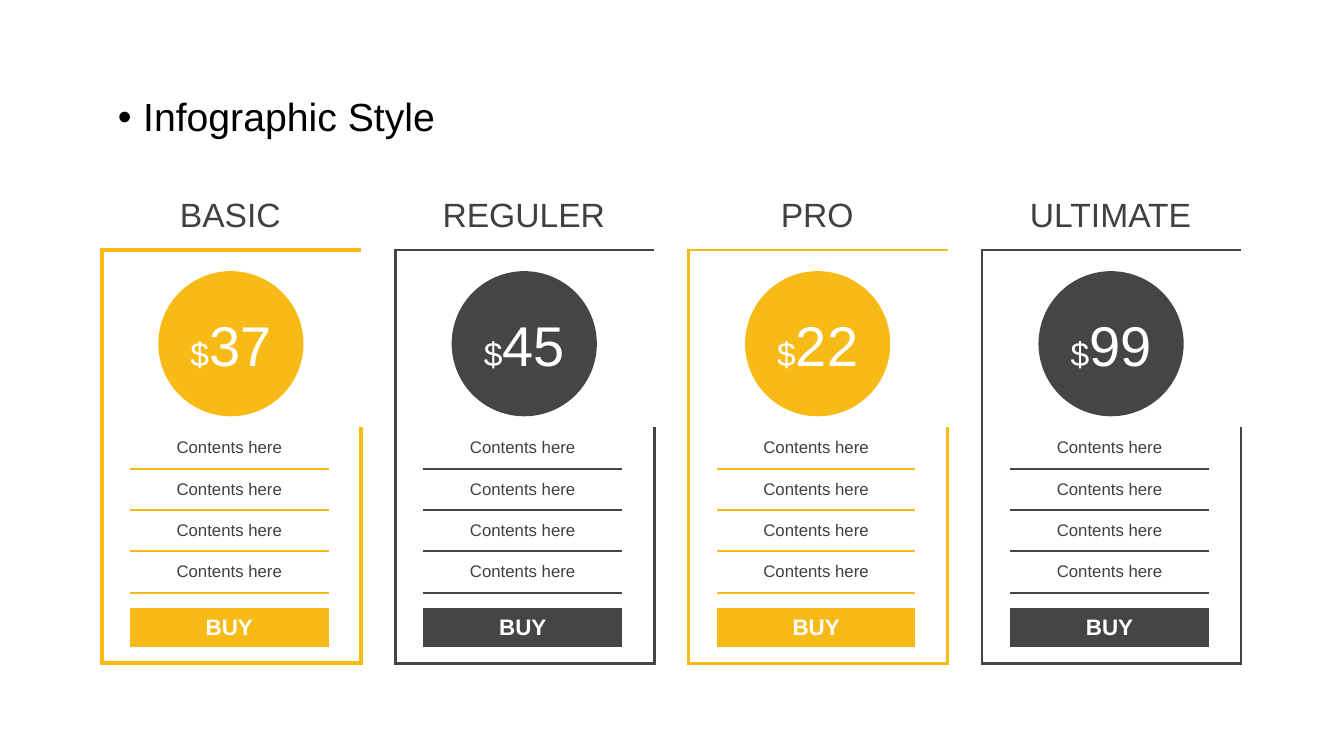
import pptx
import pptx.dml.color
import pptx.enum.shapes
import pptx.enum.text
import pptx.oxml.ns
import pptx.util
from lxml import etree

Inches, Pt = pptx.util.Inches, pptx.util.Pt
CENTER = pptx.enum.text.PP_ALIGN.CENTER
TOP, MIDDLE = pptx.enum.text.MSO_ANCHOR.TOP, pptx.enum.text.MSO_ANCHOR.MIDDLE
qn = pptx.oxml.ns.qn
YELLOW, CHARCOAL, TEXT, WHITE = "F8BA16", "454545", "404040", "FFFFFF"


def rgb(value):
    return pptx.dml.color.RGBColor.from_string(value)


def write(paragraph, text, size, color, bold=False, align=CENTER):
    paragraph.alignment = align
    run = paragraph.add_run()
    run.text = text
    for attribute, value in {"name": "Arial", "size": Pt(size), "bold": bold}.items():
        setattr(run.font, attribute, value)
    run.font.color.rgb = rgb(color)


deck = pptx.Presentation()
deck.slide_width, deck.slide_height = Inches(13.33), Inches(7.5)
slide = deck.slides.add_slide(deck.slide_layouts[5])

# Bulleted title
title = slide.shapes.title
title.left, title.top, title.width, title.height = map(Inches, (1.07, 0.92, 12.66, 0.79))
title.text_frame.auto_size = pptx.enum.text.MSO_AUTO_SIZE.NONE
title.text_frame.vertical_anchor = TOP
heading = title.text_frame.paragraphs[0]
write(heading, "Infographic Style", 28, "000000", align=pptx.enum.text.PP_ALIGN.LEFT)
heading.line_spacing, heading.space_before = 0.9, Pt(10)
bullet_format = heading._p.get_or_add_pPr()
bullet_format.set("marL", str(Inches(0.25)))
bullet_format.set("indent", str(Inches(-0.25)))
etree.SubElement(bullet_format, qn("a:buFont"), typeface="Arial")
etree.SubElement(bullet_format, qn("a:buChar"), char="•")

# Pricing cards: plan, price, accent colour, frame weight
plans = [
    ("BASIC", "37", YELLOW, 3),
    ("REGULER", "45", CHARCOAL, 2.25),
    ("PRO", "22", YELLOW, 2.25),
    ("ULTIMATE", "99", CHARCOAL, 2.25),
]
CARD_LEFT, CARD_TOP, CARD_PITCH = 1.01, 2.48, 2.91
COLUMNS = [0.28, 1.97, 0.32]
ROWS = [1.76] + [0.41] * 4 + [0.16, 0.38, 0.16]
FEATURE_ROWS, BUY_ROW = range(1, 5), 6
LAST_ROW, LAST_COLUMN = len(ROWS) - 1, len(COLUMNS) - 1

for index, (plan, price, accent, frame) in enumerate(plans):
    left = CARD_LEFT + index * CARD_PITCH

    # Plan name
    name_box = slide.shapes.add_textbox(Inches(left + 0.21), Inches(1.87), Inches(2.13), Inches(0.5))
    name_box.text_frame.word_wrap = True
    name_box.text_frame.margin_left = name_box.text_frame.margin_right = 0
    write(name_box.text_frame.paragraphs[0], plan, 24, TEXT)

    # Card table without a built-in style
    card = slide.shapes.add_table(len(ROWS), len(COLUMNS), Inches(left), Inches(CARD_TOP),
                                  Inches(sum(COLUMNS)), Inches(sum(ROWS))).table
    card.first_row = card.horz_banding = False
    card._tbl.tblPr.find(qn("a:tableStyleId")).text = "{2D5ABB26-0587-4C30-8999-92F81FD0307C}"
    for column, width in zip(card.columns, COLUMNS):
        column.width = Inches(width)
    for row, height in zip(card.rows, ROWS):
        row.height = Inches(height)

    for r in range(len(ROWS)):
        for c in range(len(COLUMNS)):
            cell = card.cell(r, c)
            cell.margin_left = cell.margin_right = cell.margin_top = cell.margin_bottom = 0
            cell.vertical_anchor = MIDDLE
            paragraph = cell.text_frame.paragraphs[0]
            if c == 1 and r in FEATURE_ROWS:
                write(paragraph, "Contents here", 12, TEXT)
            elif c == 1 and r == BUY_ROW:
                write(paragraph, "BUY", 16, WHITE, bold=True)
            else:
                etree.SubElement(paragraph._p, qn("a:endParaRPr"), sz="600")

            # Outer frame and feature separators
            borders = {
                "L": frame if c == 0 else 0,
                "R": frame if c == LAST_COLUMN else 0,
                "T": frame if r == 0 else 1.5 if c == 1 and r - 1 in FEATURE_ROWS else 0,
                "B": frame if r == LAST_ROW else 1.5 if c == 1 and r in FEATURE_ROWS else 0,
            }
            cell_format = cell._tc.get_or_add_tcPr()
            for side, weight in borders.items():
                if weight:
                    line = etree.SubElement(cell_format, qn("a:ln" + side), w=str(Pt(weight)))
                    paint = etree.SubElement(line, qn("a:solidFill"))
                    etree.SubElement(paint, qn("a:srgbClr"), val=accent)
            if c == 1 and r == BUY_ROW:
                cell.fill.solid()
                cell.fill.fore_color.rgb = rgb(accent)
            else:
                cell.fill.background()

    card.cell(0, 0).merge(card.cell(0, LAST_COLUMN))
    for c in (0, LAST_COLUMN):
        card.cell(2, c).merge(card.cell(4, c))

    # Price badge
    badge = slide.shapes.add_shape(pptx.enum.shapes.MSO_SHAPE.OVAL, Inches(left + 0.56),
                                   Inches(CARD_TOP + 0.21), Inches(1.44), Inches(1.44))
    badge.shadow.inherit = False
    badge.fill.solid()
    badge.fill.fore_color.rgb = rgb(accent)
    badge.line.fill.background()
    badge.text_frame.vertical_anchor = MIDDLE
    for text, size in (("$", 24), (price, 40)):
        write(badge.text_frame.paragraphs[0], text, size, WHITE)

deck.save("out.pptx")
